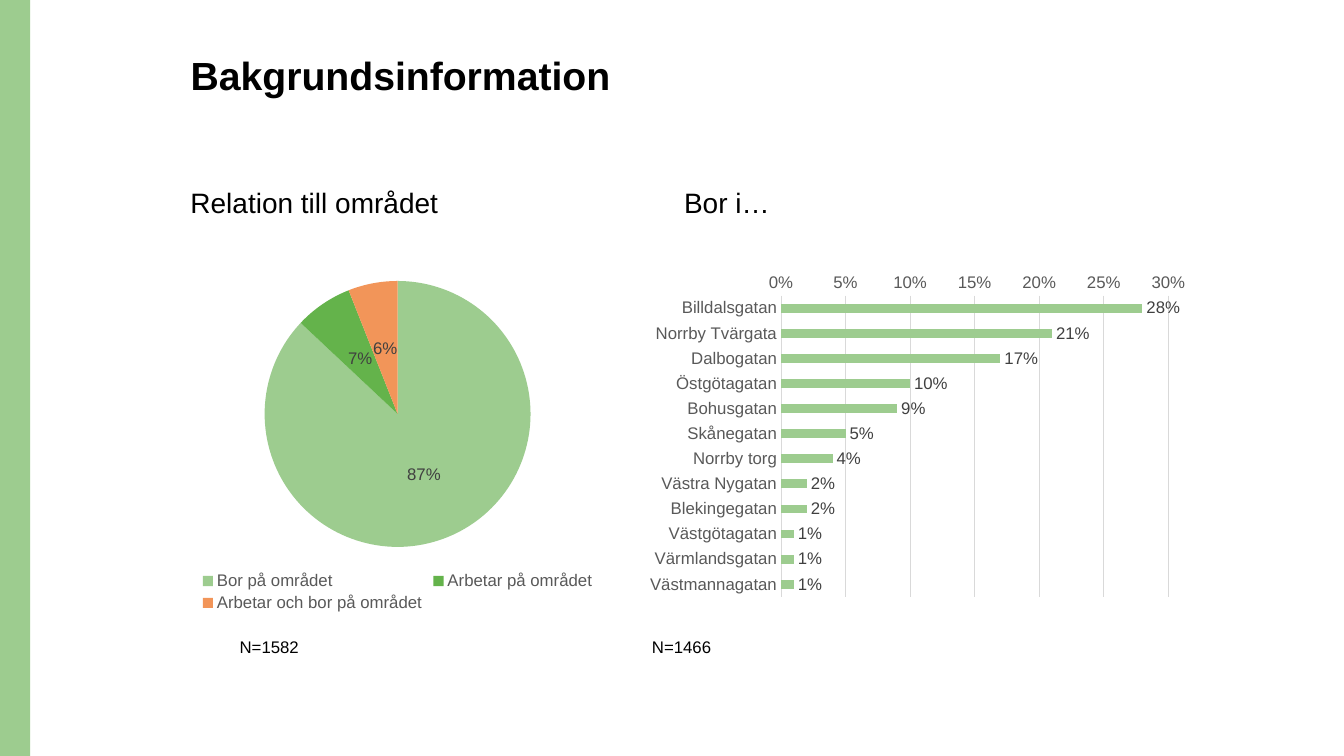
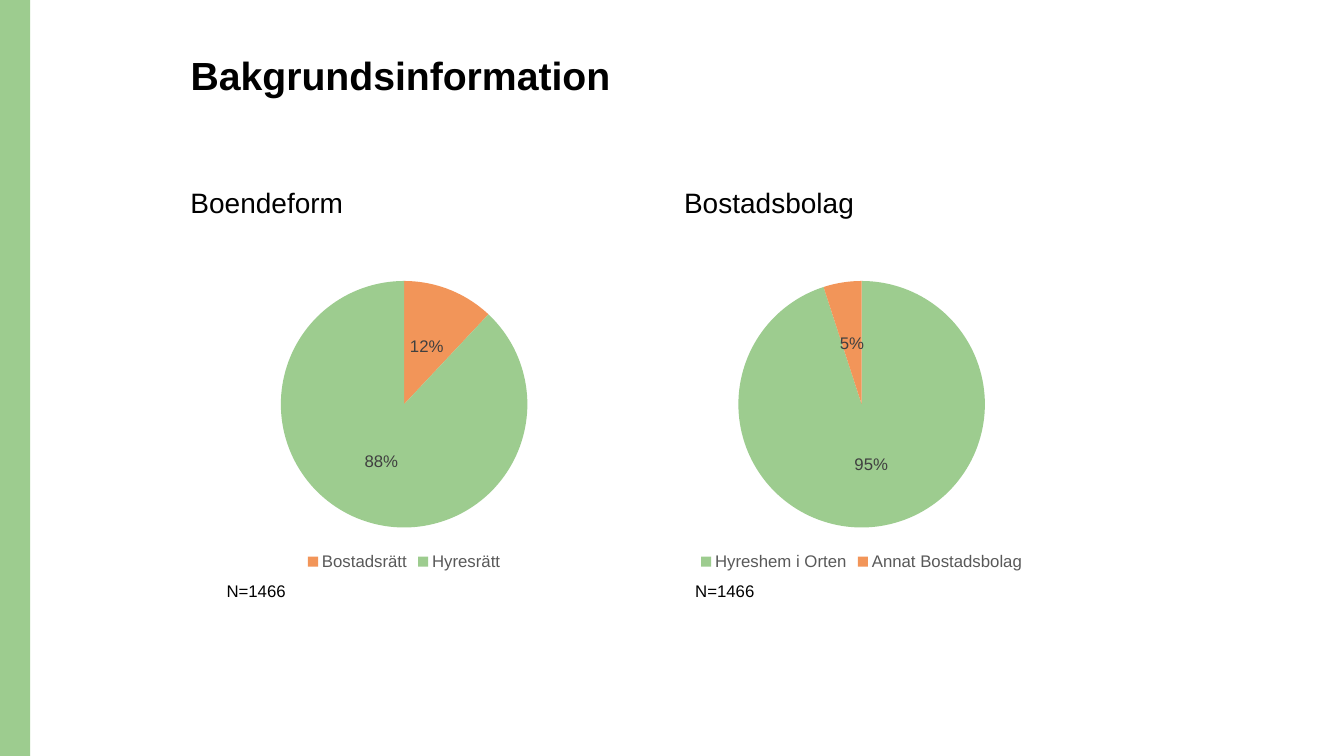
from pptx import Presentation
from pptx import util as u
from pptx.chart import data
from pptx.dml import color
from pptx.enum import chart as ch
from pptx.enum import shapes, text

FONT = "Arial"
BLACK, DARK, GREY, RULE = "000000", "404040", "595959", "D9D9D9"
LIGHT_GREEN, GREEN, ORANGE = "9DCC8F", "64B34B", "F29559"
PERCENT = "###0%"
LEFT_COL, RIGHT_COL, COL_W = 4.55, 16.99, 11.63
CHART_TOP = 6.73


def rgb(value):
    """Turn a hex string into a colour."""
    return color.RGBColor.from_string(value)


def style_font(font, size, hex_color=BLACK, bold=False):
    """Set face, size, colour and weight of a font."""
    font.name, font.size, font.bold = FONT, u.Pt(size), bold
    font.color.rgb = rgb(hex_color)


def place(sp, x, y, w, h):
    """Move and size a shape, in centimetres."""
    sp.left, sp.top, sp.width, sp.height = map(u.Cm, (x, y, w, h))


def set_text(sp, words, size, bold=False):
    """Write one left-aligned line at the top of a shape."""
    tf = sp.text_frame
    tf.word_wrap = True
    tf.auto_size = text.MSO_AUTO_SIZE.NONE
    tf.vertical_anchor = text.MSO_ANCHOR.TOP
    p = tf.paragraphs[0]
    p.text = words
    p.alignment = text.PP_ALIGN.LEFT
    style_font(p.runs[0].font, size, bold=bold)
    return p


def add_text(s, words, x, y, w, h, size):
    """Add a text box with one line."""
    set_text(s.shapes.add_textbox(*map(u.Cm, (x, y, w, h))), words, size)


def add_note(s, words, x, y):
    """Add the sample size under a chart."""
    add_text(s, words, x, y, 2.31, 0.77, 12)


def add_band(s, layout, height):
    """Draw the side band and hand it to the layout."""
    sp = s.shapes.add_shape(shapes.MSO_SHAPE.RECTANGLE, 0, 0, u.Cm(0.76), height)
    sp.shadow.inherit = False
    sp.fill.solid()
    sp.fill.fore_color.rgb = rgb(LIGHT_GREEN)
    sp.line.fill.background()
    layout.shapes.element.insert(2, sp.element)


def add_slide(prs, layout, left_heading, right_heading):
    """Add a slide with the title and two column headings."""
    s = prs.slides.add_slide(layout)
    place(s.shapes.title, LEFT_COL, 1.3, 24.66, 2.51)
    p = set_text(s.shapes.title, "Bakgrundsinformation", 28, bold=True)
    p.line_spacing = 0.9
    for words, x in ((left_heading, LEFT_COL), (right_heading, RIGHT_COL)):
        add_text(s, words, x, 4.55, COL_W, 2.29, 20)
    return s


def add_chart(s, kind, values, label_pos, x, w, h):
    """Add a chart of one labelled percentage series."""
    cd = data.CategoryChartData(number_format=PERCENT)
    cd.categories = list(values)
    cd.add_series("Series 1", list(values.values()))
    box = map(u.Cm, (x, CHART_TOP, w, h))
    chart = s.shapes.add_chart(kind, *box, cd).chart
    chart.has_title = chart.has_legend = False
    style_font(chart.font, 10)
    plot = chart.plots[0]
    plot.has_data_labels = True
    labels = plot.data_labels
    labels.show_value = True
    labels.number_format, labels.number_format_is_linked = PERCENT, False
    labels.position = label_pos
    style_font(labels.font, 12, DARK)
    return chart


def add_pie(s, values, colors, x, w, h):
    """Add a pie with a legend below."""
    chart = add_chart(s, ch.XL_CHART_TYPE.PIE, values,
                      ch.XL_LABEL_POSITION.CENTER, x, w, h)
    plot = chart.plots[0]
    plot.vary_by_categories = True
    for i, hex_color in enumerate(colors):
        fill = plot.series[0].points[i].format.fill
        fill.solid()
        fill.fore_color.rgb = rgb(hex_color)
    chart.has_legend = True
    chart.legend.position = ch.XL_LEGEND_POSITION.BOTTOM
    chart.legend.include_in_layout = False
    style_font(chart.legend.font, 12, GREY)


def style_rule(line):
    """Give a chart line the thin grey style."""
    line.color.rgb, line.width = rgb(RULE), u.Pt(0.75)


def add_bars(s, values, x, w, h):
    """Add horizontal bars, first category on top."""
    chart = add_chart(s, ch.XL_CHART_TYPE.BAR_CLUSTERED, values,
                      ch.XL_LABEL_POSITION.OUTSIDE_END, x, w, h)
    plot = chart.plots[0]
    plot.vary_by_categories, plot.gap_width = False, 182
    fill = plot.series[0].format.fill
    fill.solid()
    fill.fore_color.rgb = rgb(LIGHT_GREEN)
    cat, val = chart.category_axis, chart.value_axis
    for axis in (cat, val):
        axis.major_tick_mark = axis.minor_tick_mark = ch.XL_TICK_MARK.NONE
        style_font(axis.tick_labels.font, 12, GREY)
    cat.reverse_order = True
    style_rule(cat.format.line)
    val.minimum_scale, val.maximum_scale, val.major_unit = 0, 0.3, 0.05
    val.has_major_gridlines = True
    style_rule(val.major_gridlines.format.line)
    val.format.line.fill.background()
    val.tick_labels.number_format = PERCENT
    val.tick_labels.number_format_is_linked = False


def main():
    """Build and save the presentation."""
    prs = Presentation()
    prs.slide_width, prs.slide_height = u.Cm(33.87), u.Cm(19.05)
    layout = prs.slide_layouts[5]

    s = add_slide(prs, layout, "Relation till området", "Bor i…")
    add_band(s, layout, prs.slide_height)
    relation = {"Bor på området": 0.87, "Arbetar på området": 0.07,
                "Arbetar och bor på området": 0.06}
    add_pie(s, relation, (LIGHT_GREEN, GREEN, ORANGE), 3.86, 12.32, 8.79)
    streets = {
        "Billdalsgatan": 0.28, "Norrby Tvärgata": 0.21, "Dalbogatan": 0.17,
        "Östgötagatan": 0.1, "Bohusgatan": 0.09, "Skånegatan": 0.05,
        "Norrby torg": 0.04, "Västra Nygatan": 0.02, "Blekingegatan": 0.02,
        "Västgötagatan": 0.01, "Värmlandsgatan": 0.01, "Västmannagatan": 0.01,
    }
    add_bars(s, streets, 16.1, 14.05, 8.48)
    add_note(s, "N=1582", 5.79, 15.93)
    add_note(s, "N=1466", 16.18, 15.93)

    s = add_slide(prs, layout, "Boendeform", "Bostadsbolag")
    tenure = {"Bostadsrätt": 0.12, "Hyresrätt": 0.88}
    add_pie(s, tenure, (ORANGE, LIGHT_GREEN), 4.85, 10.67, 7.75)
    landlords = {"Hyreshem i Orten": 0.95, "Annat Bostadsbolag": 0.05}
    add_pie(s, landlords, (LIGHT_GREEN, ORANGE), 15.9, COL_W, 7.75)
    add_note(s, "N=1466", 5.46, 14.5)
    add_note(s, "N=1466", 17.27, 14.5)

    prs.save("out.pptx")


if __name__ == "__main__":
    main()
